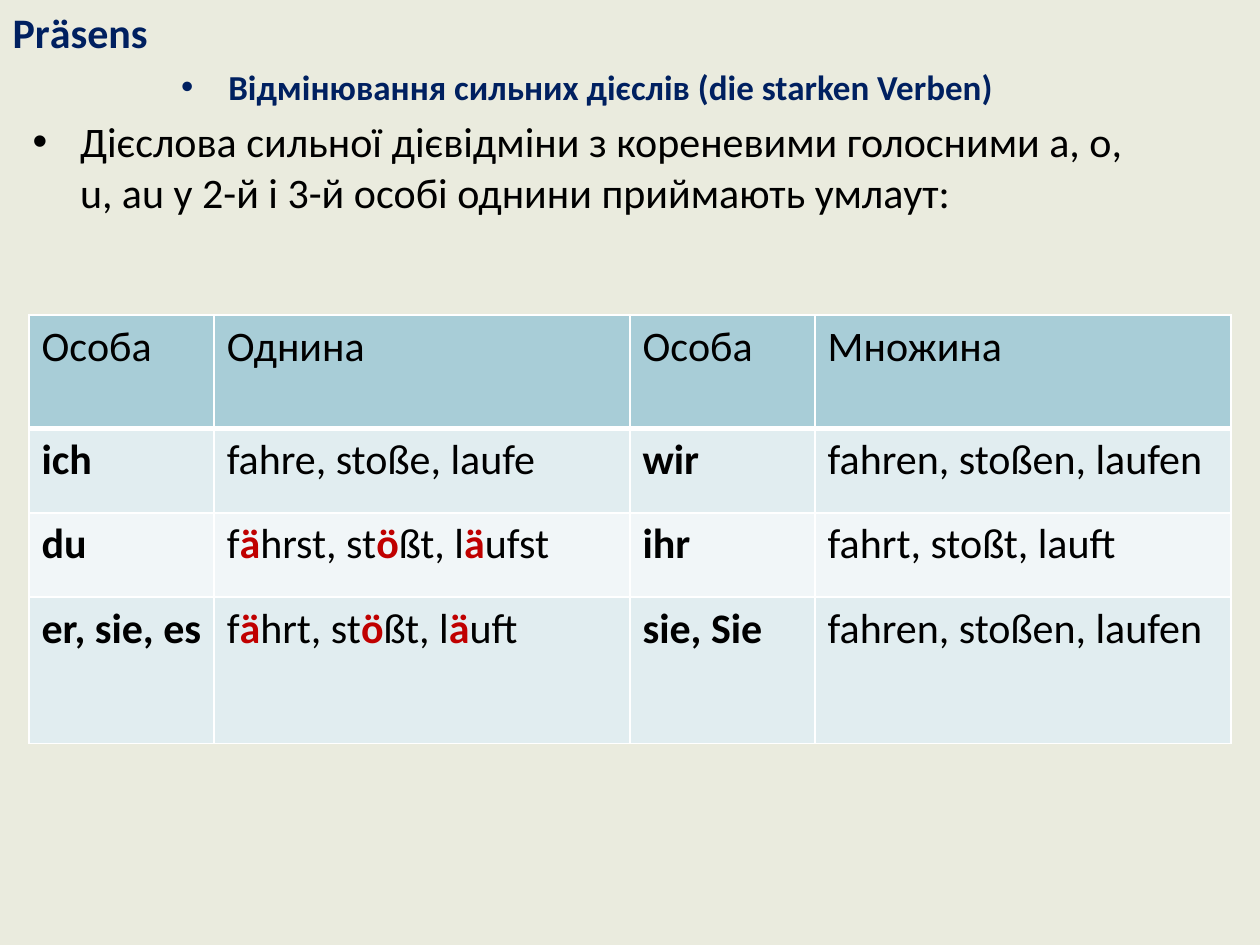
from pptx import Presentation
from pptx.dml.color import RGBColor
from pptx.enum.text import MSO_ANCHOR, MSO_AUTO_SIZE, PP_ALIGN
from pptx.oxml import parse_xml
from pptx.oxml.ns import nsdecls
from pptx.util import Inches, Pt

LEFT, CENTER = PP_ALIGN.LEFT, PP_ALIGN.CENTER
TOP, NO_FIT = MSO_ANCHOR.TOP, MSO_AUTO_SIZE.NONE
TITLE_AND_CONTENT = 1

# Content: asterisks enclose the umlauts to highlight
TITLE = "Prӓsens"
SUBTITLE = "Відмінювання сильних дієслів (die starken Verben)"
RULE = ("Дієслова сильної дієвідміни з кореневими голосними а, о, u, au "
        "у 2-й і 3-й особі однини приймають умлаут:")
CONJUGATION = [
    ("Особа", "Однина", "Особа", "Множина"),
    ("ich", "fahre, stoße, laufe", "wir", "fahren, stoßen, laufen"),
    ("du", "f*ä*hrst, st*ö*ßt, l*ä*ufst", "ihr", "fahrt, stoßt, lauft"),
    ("er, sie, es", "f*ä*hrt, st*ö*ßt, l*ä*uft", "sie, Sie", "fahren, stoßen, laufen"),
]
COLUMN_WIDTHS = (1.47, 3.3) * 2
ROW_HEIGHTS = (0.9, 0.67, 0.67, 1.16)
NAVY, BLACK, RED, WHITE = "002060", "000000", "C00000", "FFFFFF"
PAGE_FILL, HEADER_FILL, BAND_FILLS = "EAEBDE", "A8CDD7", ("F1F6F8", "E1EDF0")


def paint(fill, color):
    fill.solid()
    fill.fore_color.rgb = RGBColor.from_string(color)


def add_span(para, text, size=24, color=BLACK, bold=False):
    span = para.add_run()
    span.text = text
    span.font.name = "Calibri"
    span.font.size = Pt(size)
    span.font.bold = bold
    span.font.color.rgb = RGBColor.from_string(color)


def place(box, left, top, width, height):
    box.left, box.top = Inches(left), Inches(top)
    box.width, box.height = Inches(width), Inches(height)
    box.text_frame.vertical_anchor = TOP
    box.text_frame.auto_size = NO_FIT


def add_borders(cell, bottom):
    properties = cell._tc.get_or_add_tcPr()
    sides = (("lnL", 1), ("lnR", 1), ("lnT", 1), ("lnB", bottom))
    for position, (side, width) in enumerate(sides):
        properties.insert(position, parse_xml(
            f'<a:{side} {nsdecls("a")} w="{Pt(width)}"><a:solidFill>'
            f'<a:srgbClr val="{WHITE}"/></a:solidFill></a:{side}>'))


deck = Presentation()
deck.slide_width, deck.slide_height = Inches(10), Inches(7.5)
page = deck.slides.add_slide(deck.slide_layouts[TITLE_AND_CONTENT])
paint(page.background.fill, PAGE_FILL)

# Title
title = page.shapes.title
place(title, 0, 0, 1.41, 0.5)
title.text_frame.word_wrap = False
para = title.text_frame.paragraphs[0]
para.alignment = LEFT
add_span(para, TITLE, color=NAVY, bold=True)

# Subtitle and rule
body = page.placeholders[1]
place(body, 0.16, 0.47, 9, 4.95)
para = body.text_frame.paragraphs[0]
para.alignment = CENTER
add_span(para, SUBTITLE, 20, NAVY, True)
add_span(body.text_frame.add_paragraph(), RULE)

# Conjugation table
table = page.shapes.add_table(
    len(ROW_HEIGHTS), len(COLUMN_WIDTHS), Inches(0.23), Inches(2.5),
    Inches(sum(COLUMN_WIDTHS)), Inches(sum(ROW_HEIGHTS))).table
for column, width in zip(table.columns, COLUMN_WIDTHS):
    column.width = Inches(width)
for row, height in zip(table.rows, ROW_HEIGHTS):
    row.height = Inches(height)

for r, texts in enumerate(CONJUGATION):
    for c, text in enumerate(texts):
        cell = table.cell(r, c)
        is_header = r == 0
        is_pronoun = not is_header and c % 2 == 0
        paint(cell.fill, HEADER_FILL if is_header else BAND_FILLS[r % 2])
        # The header rule and the top edge of the first verb row coincide
        add_borders(cell, bottom=3 if is_header else 1)
        if r == 1:
            cell._tc.tcPr[2].set("w", str(Pt(3)))
        para = cell.text_frame.paragraphs[0]
        for part, piece in enumerate(text.split("*")):
            is_umlaut = part % 2 == 1
            add_span(para, piece, color=RED if is_umlaut else BLACK,
                     bold=is_umlaut or is_pronoun)

deck.save("out.pptx")
